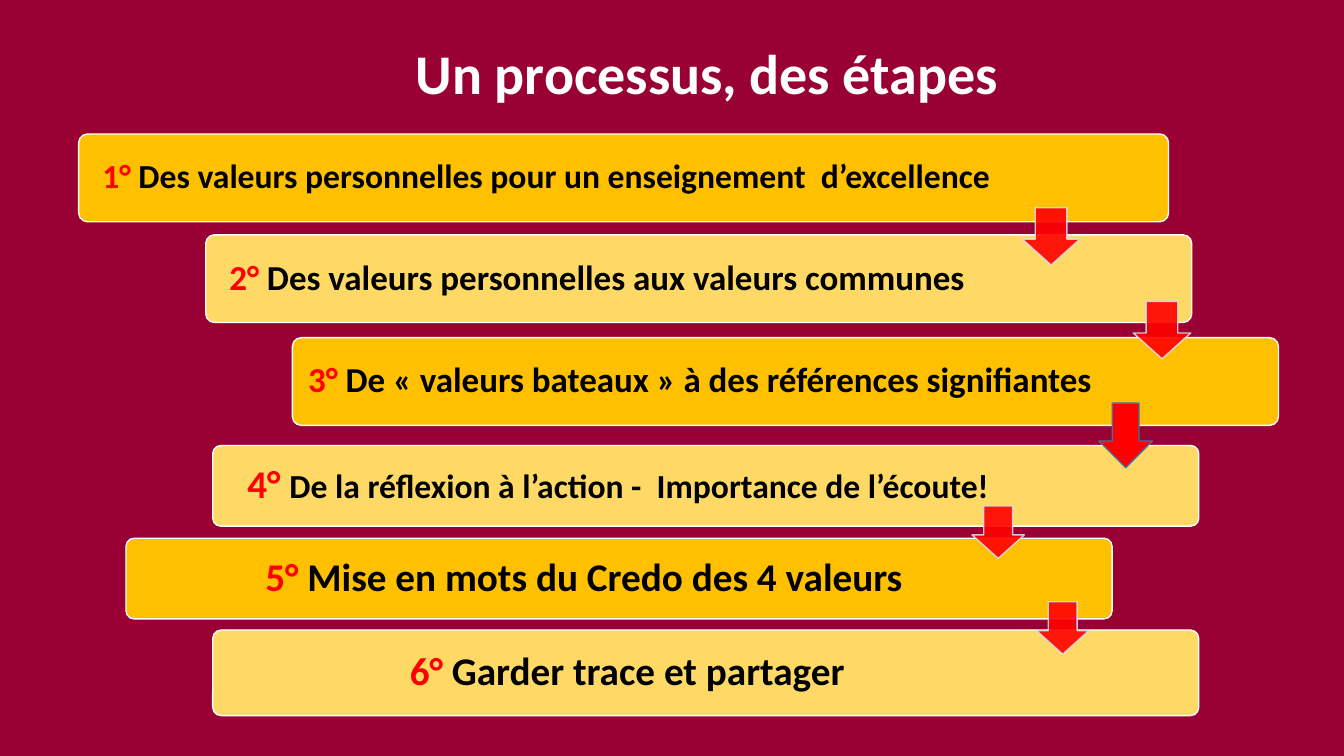
from dataclasses import dataclass

from lxml import etree
from pptx import Presentation
from pptx.dml.color import RGBColor
from pptx.enum.shapes import MSO_SHAPE
from pptx.enum.text import MSO_ANCHOR, PP_ALIGN
from pptx.oxml.ns import qn

ROUNDED = MSO_SHAPE.ROUNDED_RECTANGLE
DOWN_ARROW = MSO_SHAPE.DOWN_ARROW
MIDDLE = MSO_ANCHOR.MIDDLE
LEFT, CENTER = PP_ALIGN.LEFT, PP_ALIGN.CENTER

PX = 9144  # 100 px to the inch
POINT = 12700


@dataclass(frozen=True)
class Theme:
    font: str = "Calibri"
    background: str = "990033"
    title: str = "FFFFFF"
    bars: tuple = ("FFC000", "FFD966")
    bar_edge: str = "FFFFFF"
    number: str = "FF0000"
    text: str = "000000"
    arrow: str = "FF0000"
    soft_edge: str = "D2DEEF"
    strong_edge: str = "43739E"
    title_size: int = 40
    large: int = 28
    medium: int = 25
    small: int = 24


THEME = Theme()

# box, number, number size, label, label size, alignment, left and right inset
STEPS = [
    ((78, 133, 1081, 87), "1°", THEME.small,
     "Des valeurs personnelles pour un enseignement  d’excellence",
     THEME.small, LEFT, 21, 10),
    ((204, 233, 978, 87), "2°", THEME.medium,
     "Des valeurs personnelles aux valeurs communes",
     THEME.medium, LEFT, 21, 10),
    ((290, 335, 978, 87), "3°", THEME.medium,
     "De « valeurs bateaux » à des références signifiantes",
     THEME.medium, LEFT, 13, 10),
    ((211, 442, 978, 80), "4°", THEME.large,
     "De la réflexion à l’action -  Importance de l’écoute!",
     THEME.small, LEFT, 32, 12),
    ((125, 534, 978, 80), "5°", THEME.large,
     "Mise en mots du Credo des 4 valeurs",
     THEME.large, CENTER, 12, 82),
    ((211, 625, 978, 85), "6°", THEME.large,
     "Garder trace et partager",
     THEME.large, CENTER, 12, 168),
]

# box, edge colour, shaft share, head share, opacity in percent
ARROWS = [
    ((1014, 206, 57, 57), THEME.soft_edge, 0.55, 0.45, 90),
    ((1124, 299, 57, 57), THEME.soft_edge, 0.55, 0.45, 90),
    ((1090, 400, 53, 64), THEME.strong_edge, 0.5, 0.5, 100),
    ((964, 502, 52, 52), THEME.soft_edge, 0.55, 0.45, 90),
    ((1028, 597, 52, 52), THEME.soft_edge, 0.55, 0.45, 90),
]


def emu(box):
    return [length * PX for length in box]


def rgb(code):
    return RGBColor.from_string(code)


def style_run(run, size, color):
    run.font.name = THEME.font
    run.font.size = size * POINT
    run.font.bold = True
    run.font.color.rgb = rgb(color)


def add_outlined(slide, preset, box, fill, edge):
    outlined = slide.shapes.add_shape(preset, *emu(box))
    outlined.shadow.inherit = False
    outlined.fill.solid()
    outlined.fill.fore_color.rgb = rgb(fill)
    outlined.line.color.rgb = rgb(edge)
    outlined.line.width = POINT
    return outlined


def add_title(slide, box, wording):
    title = slide.shapes.add_textbox(*emu(box))
    frame = title.text_frame
    frame.word_wrap = True
    frame.vertical_anchor = MIDDLE
    frame.text = wording
    heading = frame.paragraphs[0]
    heading.alignment = CENTER
    heading.line_spacing = 0.9
    style_run(heading.runs[0], THEME.title_size, THEME.title)


def add_step(slide, box, fill, number, number_size, label, label_size,
             alignment, left, right):
    bar = add_outlined(slide, ROUNDED, box, fill, THEME.bar_edge)
    bar.adjustments[0] = 0.1
    frame = bar.text_frame
    frame.word_wrap = True
    frame.vertical_anchor = MIDDLE
    frame.margin_left, frame.margin_right = left * PX, right * PX
    sentence = frame.paragraphs[0]
    sentence.alignment = alignment
    sentence.line_spacing = 0.9
    for wording, size, color in ((number + " ", number_size, THEME.number),
                                 (label, label_size, THEME.text)):
        run = sentence.add_run()
        run.text = wording
        style_run(run, size, color)


def add_arrow(slide, box, edge, shaft, head, opacity):
    arrow = add_outlined(slide, DOWN_ARROW, box, THEME.arrow, edge)
    arrow.adjustments[0], arrow.adjustments[1] = shaft, head
    if opacity < 100:
        for color in arrow.element.spPr.iter(qn("a:srgbClr")):
            etree.SubElement(color, qn("a:alpha"), val=str(opacity * 1000))


def build_process_slide(presentation):
    slide = presentation.slides.add_slide(presentation.slide_layouts[6])
    slide.background.fill.solid()
    slide.background.fill.fore_color.rgb = rgb(THEME.background)

    # Heading
    add_title(slide, (160, 40, 1082, 71), "Un processus, des étapes")

    # Steps, in alternating shades
    for index, (box, *details) in enumerate(STEPS):
        add_step(slide, box, THEME.bars[index % 2], *details)

    # Arrows from each step to the next
    for arrow in ARROWS:
        add_arrow(slide, *arrow)


def main():
    presentation = Presentation()
    presentation.slide_width, presentation.slide_height = emu((1333, 750))
    build_process_slide(presentation)
    presentation.save("out.pptx")


if __name__ == "__main__":
    main()
